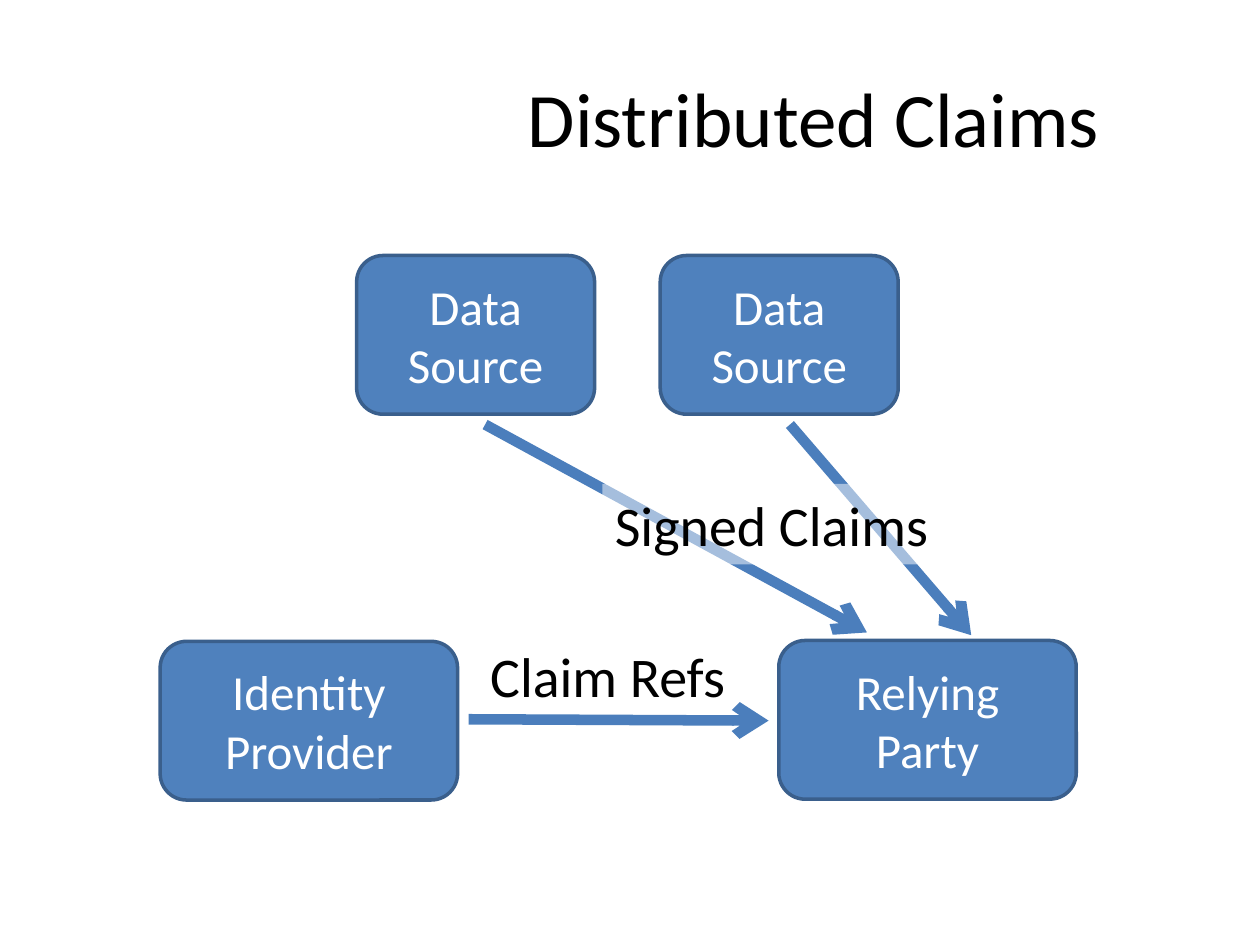
"""Build the Distributed Claims slide."""
import pptx
import pptx.dml.color
import pptx.enum.shapes
import pptx.enum.text
import pptx.oxml
import pptx.oxml.ns
import pptx.util
from lxml import etree

Pt = pptx.util.Pt
RGB = pptx.dml.color.RGBColor.from_string
Kind = pptx.enum.shapes.MSO_SHAPE
Align = pptx.enum.text.PP_ALIGN
Anchor = pptx.enum.text.MSO_ANCHOR
qn = pptx.oxml.ns.qn
hues = {"fill": "4F81BD", "edge": "3A5F8C", "arrow": "4B7EBC", "white": "FFFFFF", "black": "000000"}


def write(shape, text, size, hue, align, anchor, wrap=True):
    frame = shape.text_frame
    frame.text = text
    for name, value in {"word_wrap": wrap, "vertical_anchor": anchor}.items():
        setattr(frame, name, value)
    for para in frame.paragraphs:
        para.alignment = align
        for name, value in {"name": "Calibri", "size": Pt(size)}.items():
            setattr(para.font, name, value)
        para.font.color.rgb = RGB(hues[hue])


deck = pptx.Presentation()
deck.slide_width, deck.slide_height = Pt(720), Pt(540)
slide = deck.slides.add_slide(deck.slide_layouts[5])
shapes = slide.shapes

title = shapes.title
for name, value in {"left": 246, "top": 21.6, "width": 438, "height": 90}.items():
    setattr(title, name, Pt(value))
write(title, "Distributed Claims", 44, "black", Align.CENTER, Anchor.MIDDLE)

boxes = [
    ("Identity Provider", 91.5, 366.5, 170),
    ("Relying\nParty", 445, 366, 170),
    ("Data Source", 203.8, 146, 136),
    ("Data Source", 377.3, 146, 136),
]
for text, left, top, width in boxes:
    box = shapes.add_shape(Kind.ROUNDED_RECTANGLE, Pt(left), Pt(top), Pt(width), Pt(90.7))
    box.shadow.inherit = False
    box.fill.solid()
    box.fill.fore_color.rgb = RGB(hues["fill"])
    box.line.color.rgb = RGB(hues["edge"])
    box.line.width = Pt(2)
    write(box, text, 28, "white", Align.CENTER, Anchor.MIDDLE)

arrows = [
    (277.2, 242.6, 495.4, 361.4),
    (451.4, 242.6, 555, 363),
    (267.8, 411, 439.2, 411.8),
]
for ends in arrows:
    arrow = shapes.add_connector(pptx.enum.shapes.MSO_CONNECTOR.STRAIGHT, *map(Pt, ends))
    arrow.line.color.rgb = RGB(hues["arrow"])
    arrow.line.width = Pt(6)
    etree.SubElement(arrow.line._get_or_add_ln(), qn("a:tailEnd"), type="arrow")
    etree.SubElement(arrow._element.spPr, qn("a:effectLst"))

labels = [
    ("Signed Claims", 344.2, 276.5, 195.8, True),
    ("Claim Refs", 273, 363, 150.5, False),
]
for text, left, top, width, veil in labels:
    label = shapes.add_textbox(Pt(left), Pt(top), Pt(width), Pt(46))
    write(label, text, 32, "black", Align.LEFT, Anchor.TOP, wrap=False)
    label.text_frame.auto_size = pptx.enum.text.MSO_AUTO_SIZE.SHAPE_TO_FIT_TEXT
    if veil:
        label.fill.solid()
        label.fill.fore_color.rgb = RGB(hues["white"])
        tint = label._element.spPr.find(".//" + qn("a:srgbClr"))
        etree.SubElement(tint, qn("a:alpha"), val="50000")

deck.save("out.pptx")
